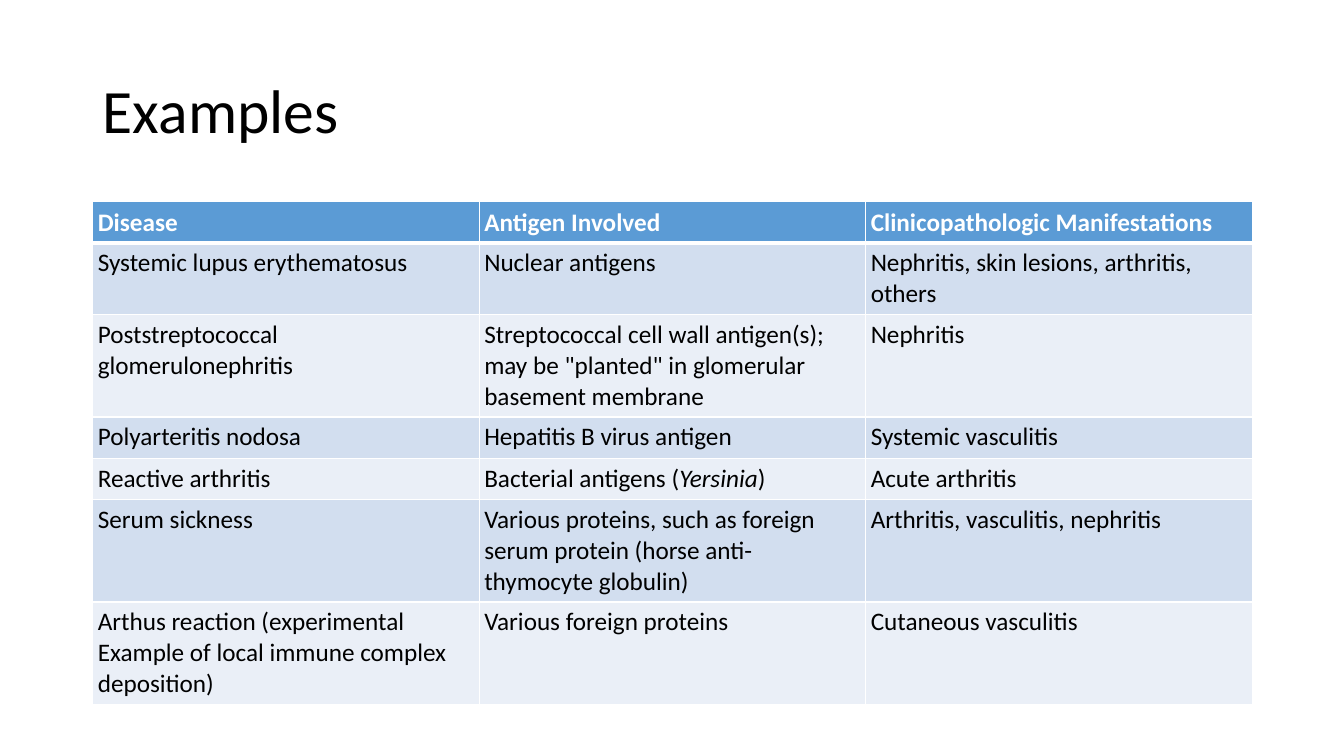
from pptx import Presentation
from pptx.dml.color import RGBColor
from pptx.enum.text import MSO_ANCHOR, PP_ALIGN
from pptx.oxml import parse_xml
from pptx.oxml.ns import nsdecls
from pptx.util import Inches, Pt

TITLE = "Examples"
HEADER = ("Disease", "Antigen Involved", "Clinicopathologic Manifestations")
DISEASES = [
    ("Systemic lupus erythematosus", "Nuclear antigens",
     "Nephritis, skin lesions, arthritis, others"),
    ("Poststreptococcal glomerulonephritis",
     'Streptococcal cell wall antigen(s); may be "planted" in glomerular basement membrane',
     "Nephritis"),
    ("Polyarteritis nodosa", "Hepatitis B virus antigen", "Systemic vasculitis"),
    ("Reactive arthritis", "Bacterial antigens (Yersinia)", "Acute arthritis"),
    ("Serum sickness",
     "Various proteins, such as foreign serum protein (horse anti-thymocyte globulin)",
     "Arthritis, vasculitis, nephritis"),
    ("Arthus reaction (experimental Example of local immune complex deposition)",
     "Various foreign proteins", "Cutaneous vasculitis"),
]
ITALIC = "Yersinia"
COLORS = {"header": "5B9BD5", "odd": "D2DEEF", "even": "EAEFF7",
          "text": "000000", "white": "FFFFFF"}
FONT = "Calibri"
LEFT, WIDTH = Inches(0.92), Inches(11.5)
TABLE_TOP, TABLE_HEIGHT = Inches(2), Inches(4.93)
ROW_HEIGHT, CELL_MARGIN = Inches(0.41), Inches(0.05)


def color(name):
    return RGBColor.from_string(COLORS[name])


def style(run, size, color_name, bold=False):
    run.font.name = FONT
    run.font.size = Pt(size)
    run.font.bold = bold
    run.font.color.rgb = color(color_name)


def set_borders(cell, top, bottom):
    """Draw white cell edges; widths in points."""
    properties = cell._tc.get_or_add_tcPr()
    edges = (("lnL", 1), ("lnR", 1), ("lnT", top), ("lnB", bottom))
    for position, (edge, width) in enumerate(edges):
        properties.insert(position, parse_xml(
            f'<a:{edge} {nsdecls("a")} w="{Pt(width)}"><a:solidFill>'
            f'<a:srgbClr val="{COLORS["white"]}"/></a:solidFill></a:{edge}>'))


def fill_cell(cell, text, row):
    is_header = row == 0
    cell.margin_left = cell.margin_right = CELL_MARGIN
    cell.margin_top = cell.margin_bottom = CELL_MARGIN
    cell.vertical_anchor = MSO_ANCHOR.BOTTOM if is_header else MSO_ANCHOR.TOP
    cell.fill.solid()
    cell.fill.fore_color.rgb = color("header" if is_header else "odd" if row % 2 else "even")
    set_borders(cell, top=3 if row == 1 else 1, bottom=3 if is_header else 1)

    # Split off the italic genus name where it occurs
    before, genus, after = text.partition(ITALIC)
    paragraph = cell.text_frame.paragraphs[0]
    for part in filter(None, (before, genus, after)):
        run = paragraph.add_run()
        run.text = part
        style(run, 18, "white" if is_header else "text", bold=is_header)
        run.font.italic = part == ITALIC


prs = Presentation()
prs.slide_width, prs.slide_height = Inches(13.33), Inches(7.5)
slide = prs.slides.add_slide(prs.slide_layouts[5])

# Title
title = slide.shapes.title
title.left, title.top, title.width, title.height = LEFT, Inches(0.4), WIDTH, Inches(1.45)
title.text_frame.text = TITLE
title.text_frame.vertical_anchor = MSO_ANCHOR.MIDDLE
heading = title.text_frame.paragraphs[0]
heading.alignment = PP_ALIGN.LEFT
heading.line_spacing = 0.9
style(heading.runs[0], 44, "text")

# Disease table: rows grow with their text
rows = [HEADER] + DISEASES
frame = slide.shapes.add_table(len(rows), len(HEADER), LEFT, TABLE_TOP, WIDTH, TABLE_HEIGHT)
table = frame.table
for r, texts in enumerate(rows):
    table.rows[r].height = ROW_HEIGHT
    for c, text in enumerate(texts):
        fill_cell(table.cell(r, c), text, r)
frame.height = TABLE_HEIGHT

prs.save("out.pptx")
